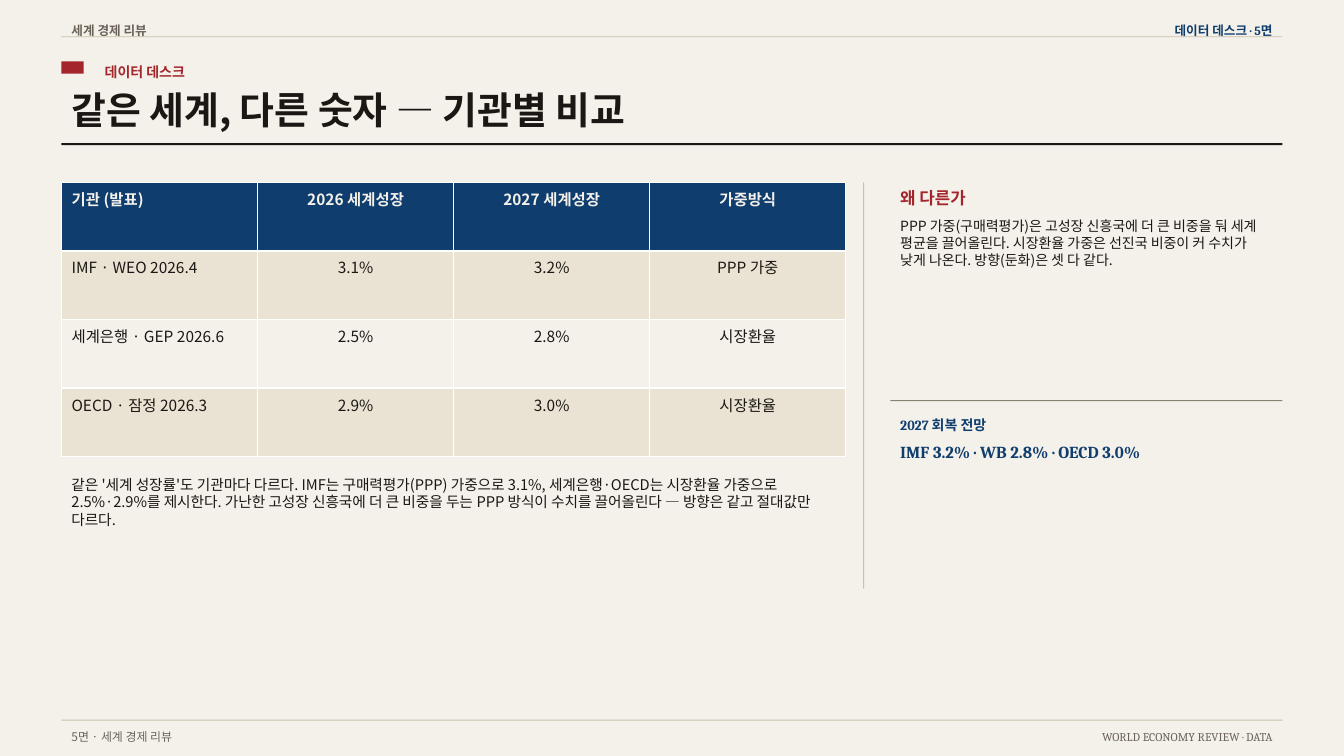
from dataclasses import dataclass

from pptx import Presentation
from pptx.dml.color import RGBColor
from pptx.enum.shapes import MSO_SHAPE
from pptx.enum.text import MSO_AUTO_SIZE, PP_ALIGN
from pptx.util import Inches, Pt

LEFT_ALIGN, CENTER, RIGHT_ALIGN = PP_ALIGN.LEFT, PP_ALIGN.CENTER, PP_ALIGN.RIGHT
RECTANGLE = MSO_SHAPE.RECTANGLE
GROW = MSO_AUTO_SIZE.SHAPE_TO_FIT_TEXT


@dataclass(frozen=True)
class Theme:
    paper: str = "F4F1EA"
    band: str = "EAE3D3"
    ink: str = "1A1714"
    muted: str = "6B6359"
    navy: str = "0F3D6E"
    red: str = "A4262C"
    hairline: str = "C9C0AE"
    divider: str = "8A8270"
    sans: str = "Noto Sans CJK KR"
    serif: str = "Cambria"
    title: float = 27
    heading: float = 12
    table: float = 11
    body: float = 10.5
    label: float = 10
    running: float = 9
    footer: float = 8.5


THEME = Theme()

# Content
PUBLICATION = "세계 경제 리뷰"
PAGE_LABEL = "데이터 데스크 · 5면"
SECTION = "데이터 데스크"
TITLE = "같은 세계, 다른 숫자 — 기관별 비교"
FORECASTS = [
    ("기관 (발표)", "2026 세계성장", "2027 세계성장", "가중방식"),
    ("IMF · WEO 2026.4", "3.1%", "3.2%", "PPP 가중"),
    ("세계은행 · GEP 2026.6", "2.5%", "2.8%", "시장환율"),
    ("OECD · 잠정 2026.3", "2.9%", "3.0%", "시장환율"),
]
SUMMARY = (
    "같은 '세계 성장률'도 기관마다 다르다. IMF는 구매력평가(PPP) 가중으로 3.1%, "
    "세계은행·OECD는 시장환율 가중으로 2.5%·2.9%를 제시한다. 가난한 고성장 신흥국에 "
    "더 큰 비중을 두는 PPP 방식이 수치를 끌어올린다 — 방향은 같고 절대값만 다르다."
)
WHY_HEADING = "왜 다른가"
WHY_TEXT = (
    "PPP 가중(구매력평가)은 고성장 신흥국에 더 큰 비중을 둬 세계 평균을 끌어올린다. "
    "시장환율 가중은 선진국 비중이 커 수치가 낮게 나온다. 방향(둔화)은 셋 다 같다."
)
OUTLOOK_LABEL = "2027 회복 전망"
OUTLOOK = "IMF 3.2% · WB 2.8% · OECD 3.0%"
FOOTER_LEFT = "5면 · 세계 경제 리뷰"
FOOTER_RIGHT = "WORLD ECONOMY REVIEW · DATA"

# Grid in inches: three columns, the table takes two and the sidebar one
PAGE_WIDTH, PAGE_HEIGHT = 13.33, 7.5
MARGIN, GUTTER = 0.61, 0.44
CONTENT_WIDTH = PAGE_WIDTH - 2 * MARGIN
COLUMN = (CONTENT_WIDTH - GUTTER) / 3
MAIN_WIDTH = 2 * COLUMN
SIDEBAR = MARGIN + MAIN_WIDTH + GUTTER
RIGHT_EDGE = MARGIN + CONTENT_WIDTH
BODY_TOP, BODY_HEIGHT = 1.81, 4.03
ROW_HEIGHT = 0.68
HAIR = 0.01

deck = Presentation()
deck.slide_width, deck.slide_height = Inches(PAGE_WIDTH), Inches(PAGE_HEIGHT)
page = deck.slides.add_slide(deck.slide_layouts[6])
page.background.fill.solid()
page.background.fill.fore_color.rgb = RGBColor.from_string(THEME.paper)


def add_block(left, top, width, height, color):
    block = page.shapes.add_shape(
        RECTANGLE, Inches(left), Inches(top), Inches(width), Inches(height))
    block.shadow.inherit = False
    block.fill.solid()
    block.fill.fore_color.rgb = RGBColor.from_string(color)
    block.line.fill.background()


def write(frame, text, size, color, font, bold, align):
    frame.text = text
    para = frame.paragraphs[0]
    para.alignment = align
    for span in para.runs:
        span.font.size = Pt(size)
        span.font.name = font
        span.font.bold = bold
        span.font.color.rgb = RGBColor.from_string(color)


def add_text(text, left, top, width, height, size, color,
             font=THEME.sans, bold=False, align=LEFT_ALIGN, wrap=False):
    box = page.shapes.add_textbox(
        Inches(left), Inches(top), Inches(width), Inches(height))
    frame = box.text_frame
    frame.word_wrap = wrap
    frame.auto_size = GROW
    write(frame, text, size, color, font, bold, align)


# Running head
add_block(MARGIN, 0.36, CONTENT_WIDTH, HAIR, THEME.hairline)
add_text(PUBLICATION, MARGIN, 0.18, 1.05, 0.25, THEME.running, THEME.muted, bold=True)
add_text(PAGE_LABEL, RIGHT_EDGE - 1.3, 0.18, 1.3, 0.25, THEME.running, THEME.navy,
         THEME.serif, True, RIGHT_ALIGN)

# Section tag and title
add_block(MARGIN, 0.61, 0.22, 0.12, THEME.red)
add_text(SECTION, 0.94, 0.58, 1.08, 0.27, THEME.label, THEME.red, THEME.serif, True)
add_text(TITLE, MARGIN, 0.81, 6.41, 0.56, THEME.title, THEME.ink, bold=True)
add_block(MARGIN, 1.42, CONTENT_WIDTH, 0.02, THEME.ink)

# Forecast table
table = page.shapes.add_table(
    len(FORECASTS), len(FORECASTS[0]), Inches(MARGIN), Inches(BODY_TOP),
    Inches(MAIN_WIDTH), Inches(ROW_HEIGHT * len(FORECASTS))).table
for row, values in enumerate(FORECASTS):
    header = row == 0
    fill = THEME.navy if header else THEME.band if row % 2 else THEME.paper
    for column, value in enumerate(values):
        cell = table.cell(row, column)
        cell.fill.solid()
        cell.fill.fore_color.rgb = RGBColor.from_string(fill)
        write(cell.text_frame, value, THEME.table,
              THEME.paper if header else THEME.ink, THEME.sans, header,
              CENTER if column else LEFT_ALIGN)
add_text(SUMMARY, MARGIN, 4.67, MAIN_WIDTH, 0.63, THEME.body, THEME.ink, wrap=True)

# Sidebar
add_block(8.56, BODY_TOP, HAIR, BODY_HEIGHT, THEME.hairline)
add_text(WHY_HEADING, SIDEBAR, BODY_TOP, 0.93, 0.3, THEME.heading, THEME.red, bold=True)
add_text(WHY_TEXT, SIDEBAR, BODY_TOP + 0.3, COLUMN, 0.61, THEME.label, THEME.ink,
         wrap=True)
add_block(SIDEBAR, 3.97, COLUMN, HAIR, THEME.divider)
add_text(OUTLOOK_LABEL, SIDEBAR, 4.08, 1.18, 0.27, THEME.label, THEME.navy,
         THEME.serif, True)
add_text(OUTLOOK, SIDEBAR, 4.33, 3.07, 0.3, THEME.heading, THEME.navy,
         THEME.serif, True)

# Footer
add_block(MARGIN, 7.14, CONTENT_WIDTH, HAIR, THEME.hairline)
add_text(FOOTER_LEFT, MARGIN, 7.19, 1.3, 0.24, THEME.footer, THEME.muted)
add_text(FOOTER_RIGHT, RIGHT_EDGE - 2.21, 7.19, 2.21, 0.24, THEME.footer, THEME.muted,
         THEME.serif, align=RIGHT_ALIGN)

deck.save("out.pptx")
